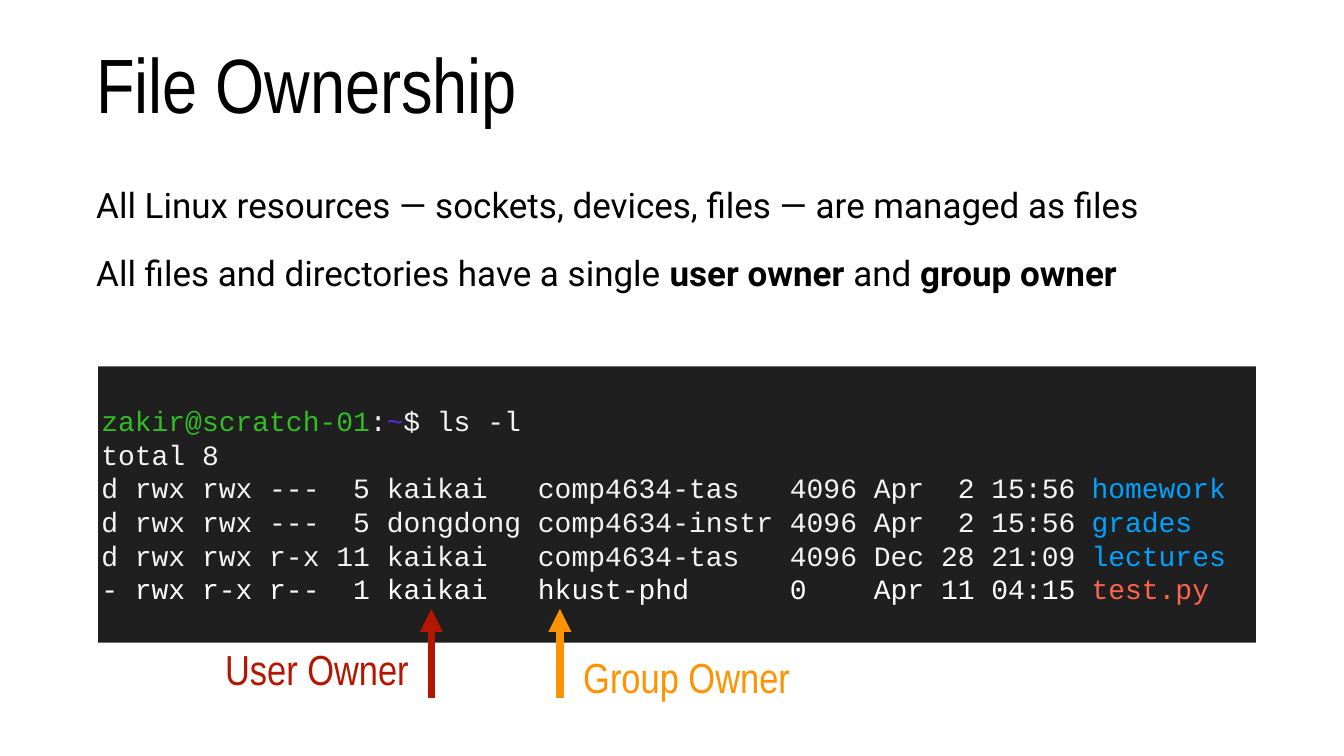
from lxml import etree
from pptx import Presentation
from pptx.dml.color import RGBColor
from pptx.enum.shapes import MSO_CONNECTOR as CONNECTOR, MSO_SHAPE as SHAPE
from pptx.enum.text import MSO_ANCHOR as ANCHOR, PP_ALIGN as ALIGN
from pptx.oxml.ns import qn
from pptx.util import Inches, Pt

COLORS = {
    "black": "000000", "terminal": "1F1F1F", "output": "F4F4F4", "white": "FFFFFF",
    "prompt": "34BC26", "home": "5230E1", "directory": "00A2FF", "script": "FF644E",
    "user": "B51600", "group": "FE9301",
}


def write(shape, paragraphs, font, size, color="black", align=ALIGN.LEFT,
          wrap=True, gap=0, line_spacing=None):
    """Fill a shape with paragraphs, each a list of (text, color, bold) runs."""
    frame = shape.text_frame
    frame.word_wrap = wrap
    frame.vertical_anchor = ANCHOR.MIDDLE
    frame.margin_left = frame.margin_right = Inches(0.06)
    frame.margin_top = frame.margin_bottom = Inches(0.06)
    for index, runs in enumerate(paragraphs):
        paragraph = frame.add_paragraph() if index else frame.paragraphs[0]
        paragraph.alignment = align
        paragraph.space_before = Pt(gap if index else 0)
        if line_spacing:
            paragraph.line_spacing = Pt(line_spacing)
        for text, run_color, bold in runs:
            run = paragraph.add_run()
            run.text = text
            run.font.name = font
            run.font.size = Pt(size)
            run.font.bold = bold
            run.font.color.rgb = RGBColor.from_string(COLORS[run_color or color])


presentation = Presentation()
presentation.slide_width = Inches(26.67)
presentation.slide_height = Inches(15)
slide = presentation.slides.add_slide(presentation.slide_layouts[6])
shapes = slide.shapes

# Title
title = shapes.add_textbox(Inches(1.85), Inches(0.39), Inches(22.97), Inches(2.5))
write(title, [[("File Ownership", None, False)]], font="Arial Narrow", size=110)

# Statements
statements = [
    [("All Linux resources — sockets, devices, files — are managed as files", None, False)],
    [("All files and directories have a single ", None, False), ("user owner", None, True),
     (" and ", None, False), ("group owner", None, True)],
]
body = shapes.add_textbox(Inches(1.85), Inches(3.32), Inches(23.17), Inches(2.83))
write(body, statements, font="Roboto", size=50, gap=37)

# Terminal listing
listing = [
    ("d rwx rwx ---  5 kaikai   comp4634-tas   4096 Apr  2 15:56 ", "output", "homework", "directory"),
    ("d rwx rwx ---  5 dongdong comp4634-instr 4096 Apr  2 15:56 ", "output", "grades", "directory"),
    ("d rwx rwx r-x 11 kaikai   comp4634-tas   4096 Dec 28 21:09 ", "output", "lectures", "directory"),
    ("- rwx r-x r--  1 kaikai   hkust-phd      0    Apr 11 04:15 ", "white", "test.py", "script"),
]
lines = [
    [("zakir@scratch-01", "prompt", False), (":", None, False),
     ("~", "home", False), ("$ ls -l", None, False)],
    [("total 8", None, False)],
]
for details, details_color, name, name_color in listing:
    lines.append([(details, details_color, False), (name, name_color, False)])
terminal = shapes.add_shape(SHAPE.RECTANGLE, Inches(1.95), Inches(7.27),
                            Inches(22.97), Inches(5.48))
terminal.shadow.inherit = False
terminal.fill.solid()
terminal.fill.fore_color.rgb = RGBColor.from_string(COLORS["terminal"])
terminal.line.fill.background()
write(terminal, lines, font="Courier New", size=40, color="output", line_spacing=48)

# Owner labels and the arrows pointing into the listing
owners = [
    ("User Owner", "user", 4.32, 12.72, 3.94, 8.56),
    ("Group Owner", "group", 11.41, 12.87, 4.43, 11.11),
]
for text, color, left, top, width, arrow_x in owners:
    label = shapes.add_textbox(Inches(left), Inches(top), Inches(width), Inches(1.1))
    write(label, [[(text, None, False)]], font="Arial Narrow", size=60, color=color,
          align=ALIGN.CENTER, wrap=False)

    arrow = shapes.add_connector(CONNECTOR.STRAIGHT, Inches(arrow_x), Inches(13.85),
                                 Inches(arrow_x), Inches(12.08))
    arrow.line.width = Pt(11)
    arrow.line.color.rgb = RGBColor.from_string(COLORS[color])
    properties = arrow.element.spPr
    etree.SubElement(properties.find(qn("a:ln")), qn("a:tailEnd"), type="triangle")
    etree.SubElement(properties, qn("a:effectLst"))

presentation.save("out.pptx")
